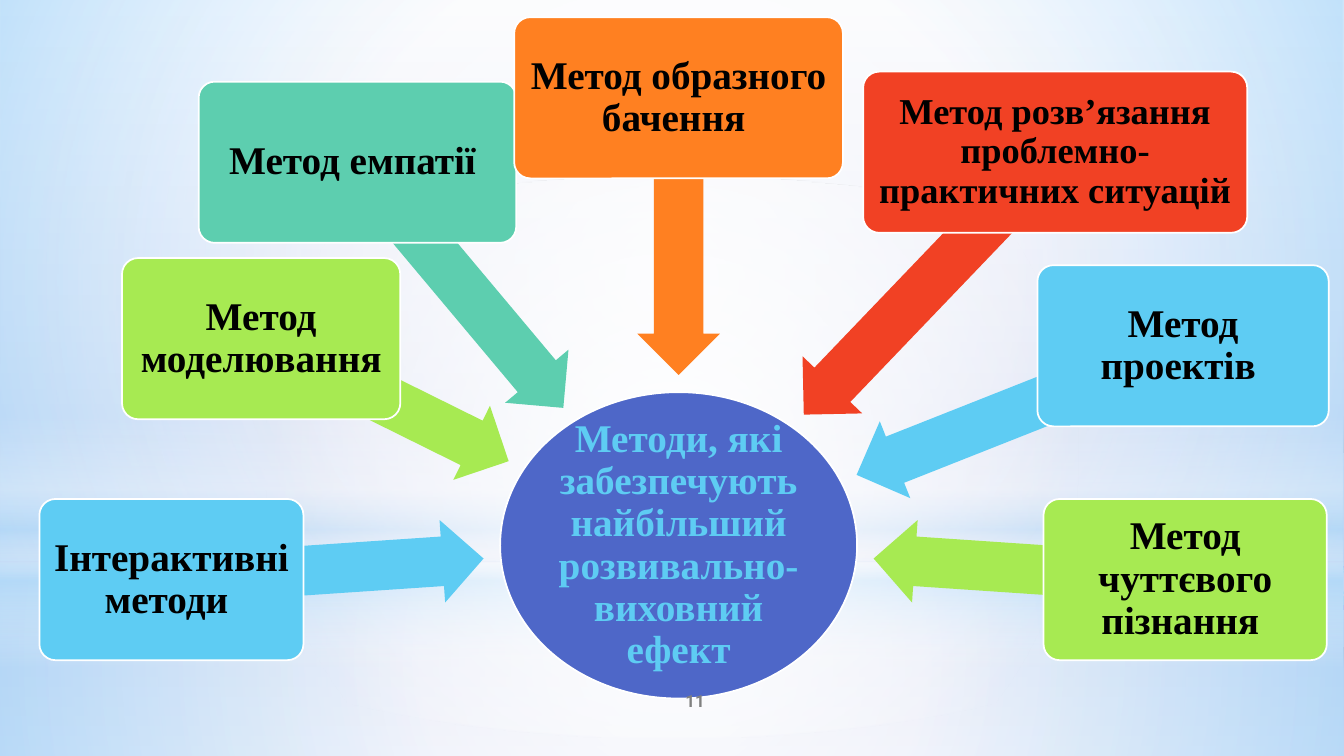
import math
import lxml.etree
import pptx
import pptx.util
import pptx.dml.color
import pptx.enum.shapes
import pptx.enum.text
import pptx.oxml.ns

WIDE, HIGH = 13.33, 7.5
GAP = 0.17
THICK = 0.82
SERIF = "Times New Roman"
HUES = {
    "navy": "4E67C8", "sky": "5ECCF3", "lime": "A7EA52", "mint": "5DCEAF",
    "orange": "FF8021", "red": "F14124", "white": "FFFFFF", "black": "000000",
    "gray": "808080", "pale": "B4DCFA", "mist": "F6F7FC", "haze": "AFBBE6",
    "dusk": "CAD1EE",
}
KINDS = pptx.enum.shapes.MSO_SHAPE

BASE = [(0, "mist", 100), (74, "haze", 100), (83, "haze", 100), (100, "dusk", 100)]
GLOWS = [
    (KINDS.RECTANGLE, (0, 74.4, 100, 25.6), True,
     [(0, "white", 91), (37, "white", 76), (100, "pale", 79)]),
    (KINDS.RECTANGLE, (0, 0, 100, 74.4), True,
     [(0, "white", 89), (48, "white", 62), (100, "pale", 79)]),
    (KINDS.RECTANGLE, (0, 54.93, 100, 33.33), False,
     [(0, "white", 0), (29, "white", 30), (45, "pale", 40),
      (55, "white", 26), (65, "pale", 60), (100, "white", 0)]),
    (KINDS.OVAL, (0, 23.33, 100, 74.4), True,
     [(0, "white", 100), (56, "white", 0)]),
]
HUB = (37.21, 51.87, 26.56, 40.53)
TALL = 21.33
NODES = [
    ("Інтерактивні методи ", "sky", 2.93, 66, 19.65, 28),
    ("Метод моделювання", "lime", 9.08, 34.13, 20.71, 28),
    ("Метод емпатії ", "mint", 14.78, 10.8, 23.63, 28),
    ("Метод образного бачення ", "orange", 38.26, 2.27, 24.46, 28),
    ("Метод розв’язання проблемно-практичних ситуацій ", "red", 64.22, 9.47, 28.58, 26),
    ("Метод проектів ", "sky", 77.19, 35.07, 21.68, 28),
    ("Метод чуттєвого пізнання ", "lime", 77.64, 66, 21.08, 28),
]


def color(name):
    return pptx.dml.color.RGBColor.from_string(HUES[name])


def scale(box):
    left, top, wide, high = box
    return left * WIDE / 100, top * HIGH / 100, wide * WIDE / 100, high * HIGH / 100


def center(box):
    left, top, wide, high = box
    return left + wide / 2, top + high / 2


def draw(slide, kind, box, hue, edge=None):
    shape = slide.shapes.add_shape(kind, *map(pptx.util.Inches, box))
    shape.shadow.inherit = False
    shape.fill.solid()
    shape.fill.fore_color.rgb = color(hue)
    if edge:
        shape.line.color.rgb = color(edge)
        shape.line.width = pptx.util.Pt(1.25)
    else:
        shape.line.fill.background()
    return shape


def write(shape, text, size, hue, inset, face=SERIF, pitch=0.9):
    frame = shape.text_frame
    frame.word_wrap = True
    frame.vertical_anchor = pptx.enum.text.MSO_ANCHOR.MIDDLE
    frame.margin_left = frame.margin_right = pptx.util.Inches(inset)
    frame.margin_top = frame.margin_bottom = pptx.util.Inches(inset)
    para = frame.paragraphs[0]
    para.text = text
    para.alignment = pptx.enum.text.PP_ALIGN.CENTER
    para.line_spacing = pitch
    para.font.name = face
    para.font.size = pptx.util.Pt(size)
    para.font.bold = True
    para.font.color.rgb = color(hue)


def blend(root, stops, radial):
    tag = pptx.oxml.ns.qn
    grad = lxml.etree.Element(tag("a:gradFill"), rotWithShape="1")
    group = lxml.etree.SubElement(grad, tag("a:gsLst"))
    for place, hue, alpha in stops:
        stop = lxml.etree.SubElement(group, tag("a:gs"), pos=str(place * 1000))
        tint = lxml.etree.SubElement(stop, tag("a:srgbClr"), val=HUES[hue])
        if alpha < 100:
            lxml.etree.SubElement(tint, tag("a:alpha"), val=str(alpha * 1000))
    if radial:
        ring = lxml.etree.SubElement(grad, tag("a:path"), path="circle")
        lxml.etree.SubElement(ring, tag("a:fillToRect"), l="50000", t="50000",
                              r="50000", b="50000")
    else:
        lxml.etree.SubElement(grad, tag("a:lin"), ang="5400000", scaled="0")
    solid = next(root.iter(tag("a:solidFill")))
    solid.getparent().replace(solid, grad)


def add_sky(slide):
    slide.background.fill.solid()
    slide.background.fill.fore_color.rgb = color("mist")
    blend(slide.element, BASE, False)
    for kind, box, radial, stops in GLOWS:
        glow = draw(slide, kind, scale(box), "white")
        blend(glow.element, stops, radial)


def add_hub(slide, box):
    hub = draw(slide, KINDS.OVAL, box, "navy", "white")
    write(hub, "Методи, які забезпечують найбільший розвивально-виховний ефект",
          28, "sky", 0.02)


def add_arrow(slide, node, hub, hue):
    start, goal = center(node), center(hub)
    run, drop = goal[0] - start[0], goal[1] - start[1]
    angle = math.atan2(drop, run)
    rim = 1 / math.hypot(2 * math.cos(angle) / hub[2], 2 * math.sin(angle) / hub[3])
    reach = math.hypot(run, drop) - rim - GAP
    mid_x = start[0] + reach / 2 * math.cos(angle)
    mid_y = start[1] + reach / 2 * math.sin(angle)
    box = mid_x - reach / 2, mid_y - THICK / 2, reach, THICK
    arrow = draw(slide, KINDS.LEFT_ARROW, box, hue)
    arrow.adjustments[0] = 0.6
    arrow.adjustments[1] = 0.5
    arrow.rotation = math.degrees(angle) + 180


def add_node(slide, box, text, hue, size):
    node = draw(slide, KINDS.ROUNDED_RECTANGLE, box, hue, "white")
    node.adjustments[0] = 0.1
    write(node, text, size, "black", 0.1)


def add_number(slide, box):
    label = slide.shapes.add_textbox(*map(pptx.util.Inches, box))
    write(label, "11", 12, "gray", 0.05, "Roboto", 1)


def main():
    deck = pptx.Presentation()
    deck.slide_width = pptx.util.Inches(WIDE)
    deck.slide_height = pptx.util.Inches(HIGH)
    slide = deck.slides.add_slide(deck.slide_layouts[6])
    add_sky(slide)
    hub = scale(HUB)
    add_hub(slide, hub)
    for text, hue, left, top, wide, size in NODES:
        box = scale((left, top, wide, TALL))
        add_arrow(slide, box, hub, hue)
        add_node(slide, box, text, hue, size)
    add_number(slide, scale((41.71, 90, 20.03, 5.33)))
    deck.save("out.pptx")


if __name__ == "__main__":
    main()
